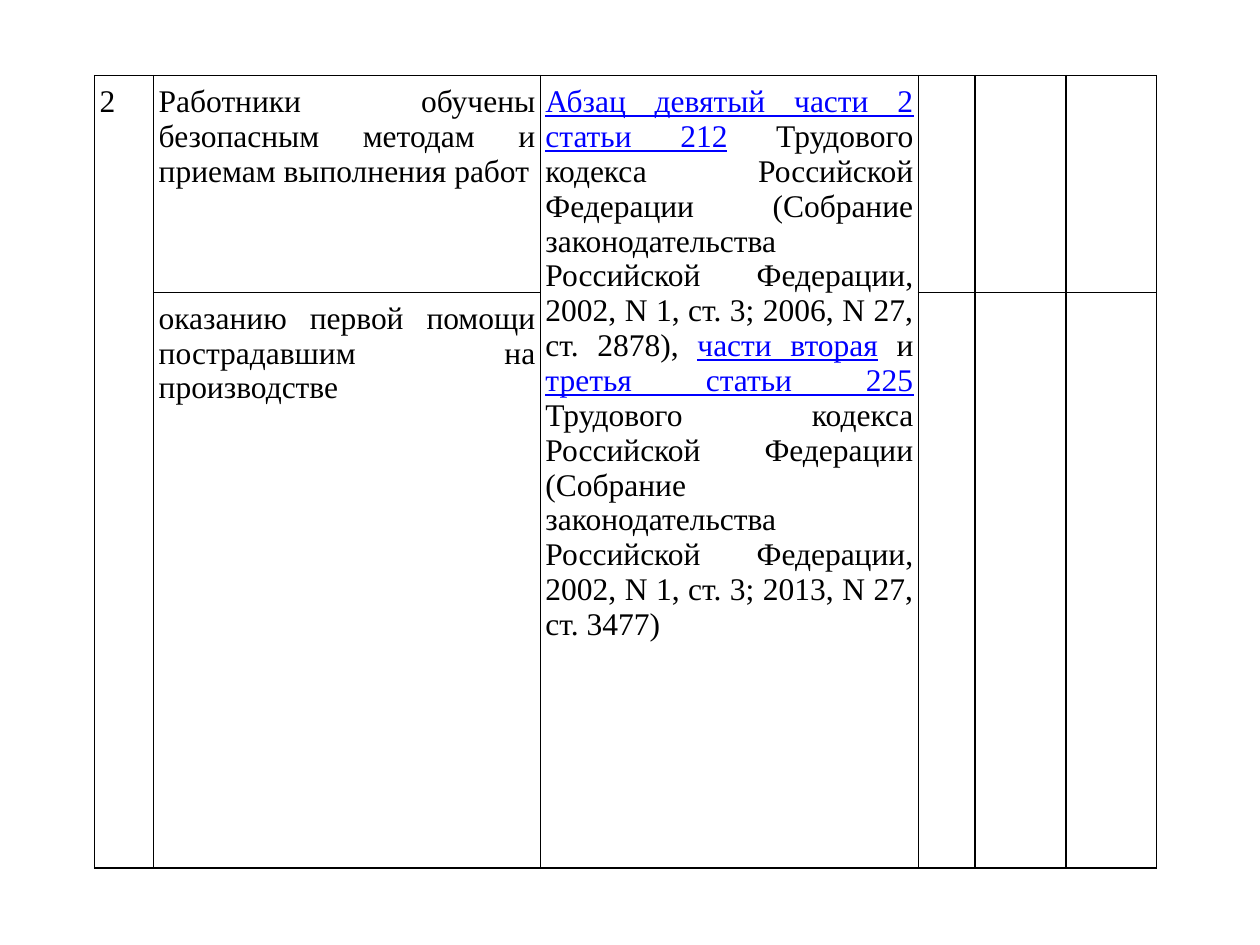
from lxml.etree import SubElement
from pptx import Presentation
from pptx.dml.color import RGBColor
from pptx.enum.text import PP_ALIGN
from pptx.oxml.ns import qn
from pptx.util import Inches, Pt

# Content: each cell is a list of (text, style) runs
COLORS = {"text": "000000", "link": "0000FF", "border": "000000"}
CELLS = {
    (0, 0): [("2", "text")],
    (0, 1): [("Работники обучены безопасным методам и приемам выполнения работ", "text")],
    (0, 2): [
        ("Абзац девятый части 2 статьи 212", "link"),
        (" Трудового кодекса Российской Федерации (Собрание законодательства "
         "Российской Федерации, 2002, N 1, ст. 3; 2006, N 27, ст. 2878), ", "text"),
        ("части вторая", "link"),
        (" и ", "text"),
        ("третья статьи 225", "link"),
        (" Трудового кодекса Российской Федерации (Собрание законодательства "
         "Российской Федерации, 2002, N 1, ст. 3; 2013, N 27, ст. 3477)", "text"),
    ],
    (1, 1): [("оказанию первой помощи пострадавшим на производстве", "text")],
}

# Layout in inches
LEFT, TOP = 0.75, 0.6
COLUMNS = [0.47, 3.07, 3, 0.45, 0.72, 0.72]
ROWS = [1.72, 4.03]
MERGED_COLUMNS = (0, 2)
MARGINS = {"margin_left": 0.04, "margin_right": 0.04, "margin_top": 0.07, "margin_bottom": 0.07}
FONT = {"name": "Times New Roman", "size": Pt(18)}


def add_borders(cell):
    properties = cell._tc.get_or_add_tcPr()
    for side in ("a:lnL", "a:lnR", "a:lnT", "a:lnB"):
        line = SubElement(properties, qn(side), w=str(Pt(1)))
        fill = SubElement(line, qn("a:solidFill"))
        SubElement(fill, qn("a:srgbClr"), val=COLORS["border"])


def write_runs(paragraph, runs):
    for text, style in runs:
        run = paragraph.add_run()
        run.text = text
        for name, value in FONT.items():
            setattr(run.font, name, value)
        run.font.underline = style == "link"
        run.font.color.rgb = RGBColor.from_string(COLORS[style])


def main():
    presentation = Presentation()
    presentation.slide_width, presentation.slide_height = Inches(10), Inches(7.5)
    slide = presentation.slides.add_slide(presentation.slide_layouts[6])

    # Table grid
    table = slide.shapes.add_table(
        len(ROWS), len(COLUMNS), Inches(LEFT), Inches(TOP),
        Inches(sum(COLUMNS)), Inches(sum(ROWS))).table
    table.first_row = table.horz_banding = False
    for column, width in zip(table.columns, COLUMNS):
        column.width = Inches(width)
    for row, height in zip(table.rows, ROWS):
        row.height = Inches(height)

    # Cell format: borders come before the fill in the cell properties
    for cell in table.iter_cells():
        add_borders(cell)
        cell.fill.background()
        for name, value in MARGINS.items():
            setattr(cell, name, Inches(value))
    for column in MERGED_COLUMNS:
        table.cell(0, column).merge(table.cell(1, column))

    # Cell text
    for (row, column), runs in CELLS.items():
        paragraph = table.cell(row, column).text_frame.paragraphs[0]
        paragraph.alignment = PP_ALIGN.JUSTIFY if column else PP_ALIGN.LEFT
        write_runs(paragraph, runs)

    presentation.save("out.pptx")


if __name__ == "__main__":
    main()
